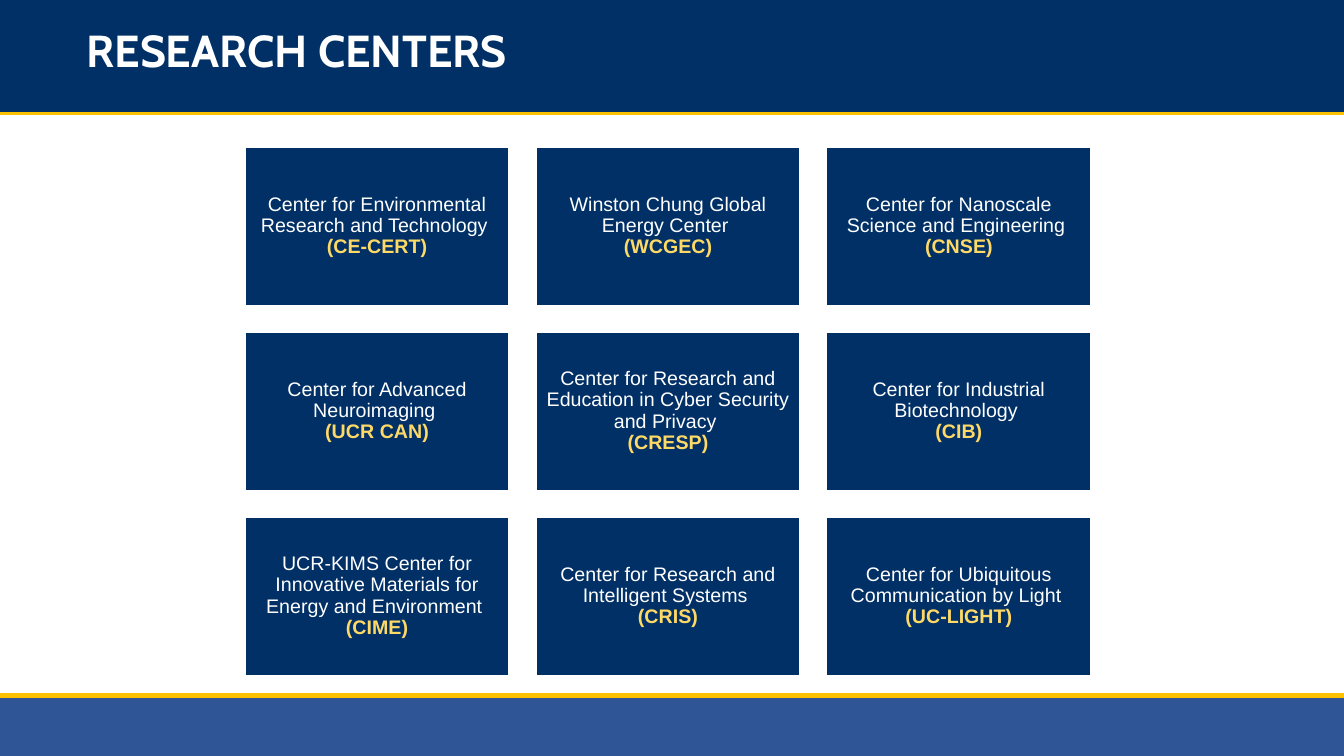
from lxml import etree
from pptx import Presentation
from pptx.dml.color import RGBColor
from pptx.enum.shapes import MSO_CONNECTOR, MSO_SHAPE
from pptx.enum.text import MSO_ANCHOR, PP_ALIGN
from pptx.oxml.ns import qn
from pptx.util import Inches, Pt

RECT = MSO_SHAPE.RECTANGLE
STRAIGHT = MSO_CONNECTOR.STRAIGHT
MIDDLE = MSO_ANCHOR.MIDDLE
CENTER = PP_ALIGN.CENTER

COLORS = {
    "navy": "003066",
    "blue": "2F5597",
    "gold": "FFC000",
    "pale": "FFD966",
    "white": "FFFFFF",
}

CENTERS = [
    ("Center for Environmental Research and Technology", "CE-CERT"),
    ("Winston Chung Global Energy Center", "WCGEC"),
    ("Center for Nanoscale Science and Engineering", "CNSE"),
    ("Center for Advanced Neuroimaging", "UCR CAN"),
    ("Center for Research and Education in Cyber Security and Privacy", "CRESP"),
    ("Center for Industrial Biotechnology", "CIB"),
    ("UCR-KIMS Center for Innovative Materials for Energy and Environment", "CIME"),
    ("Center for Research and Intelligent Systems", "CRIS"),
    ("Center for Ubiquitous Communication by Light", "UC-LIGHT"),
]


class Deck:
    def __init__(self, slide):
        self.shapes = slide.shapes

    def color(self, name):
        return RGBColor.from_string(COLORS[name])

    def style(self, run, font, size, color, bold=False):
        run.font.name = font
        run.font.size = Pt(size)
        run.font.bold = bold
        run.font.color.rgb = self.color(color)

    def band(self, left, top, width, height, fill):
        shape = self.shapes.add_shape(
            RECT, Inches(left), Inches(top), Inches(width), Inches(height))
        shape.shadow.inherit = False
        shape.fill.solid()
        shape.fill.fore_color.rgb = self.color(fill)
        shape.line.fill.background()
        return shape

    def rule(self, top):
        line = self.shapes.add_connector(
            STRAIGHT, Inches(-0.04), Inches(top), Inches(13.36), Inches(top))
        line.line.color.rgb = self.color("gold")
        line.line.width = Pt(3)
        etree.SubElement(line._element.spPr, qn("a:effectLst"))

    def title(self, text):
        box = self.shapes.add_textbox(
            Inches(0.76), Inches(0.18), Inches(9.46), Inches(0.7))
        frame = box.text_frame
        frame.word_wrap = True
        frame.vertical_anchor = MIDDLE
        frame.text = text
        para = frame.paragraphs[0]
        para.line_spacing = 0.9
        self.style(para.runs[0], "Cabin", 32, "white", True)

    def card(self, left, top, width, height, name, short):
        shape = self.band(left, top, width, height, "navy")
        shape.line.color.rgb = self.color("white")
        shape.line.width = Pt(1)
        frame = shape.text_frame
        frame.word_wrap = True
        frame.vertical_anchor = MIDDLE
        frame.margin_left = frame.margin_right = Inches(0.06)
        frame.margin_top = frame.margin_bottom = Inches(0.06)
        para = frame.paragraphs[0]
        para.text = f"{name} \v({short})"
        para.alignment = CENTER
        para.line_spacing = 0.9
        first, last = para.runs
        self.style(first, "Arial", 14, "white")
        self.style(last, "Arial", 14, "pale", True)
        for gap in para._p.findall(qn("a:br")):
            etree.SubElement(gap, qn("a:rPr"), sz="1400")


def main():
    prs = Presentation()
    prs.slide_width = Inches(13.33)
    prs.slide_height = Inches(7.5)
    deck = Deck(prs.slides.add_slide(prs.slide_layouts[6]))

    deck.rule(1.12)
    deck.band(-0.03, 6.9, 13.39, 0.61, "blue")
    deck.rule(6.9)
    deck.band(-0.03, -0.01, 13.36, 1.12, "navy")
    deck.title("RESEARCH CENTERS")

    for index, (name, short) in enumerate(CENTERS):
        row, col = divmod(index, 3)
        deck.card(2.43 + col * 2.885, 1.46 + row * 1.835, 2.62, 1.57, name, short)

    prs.save("out.pptx")


if __name__ == "__main__":
    main()
